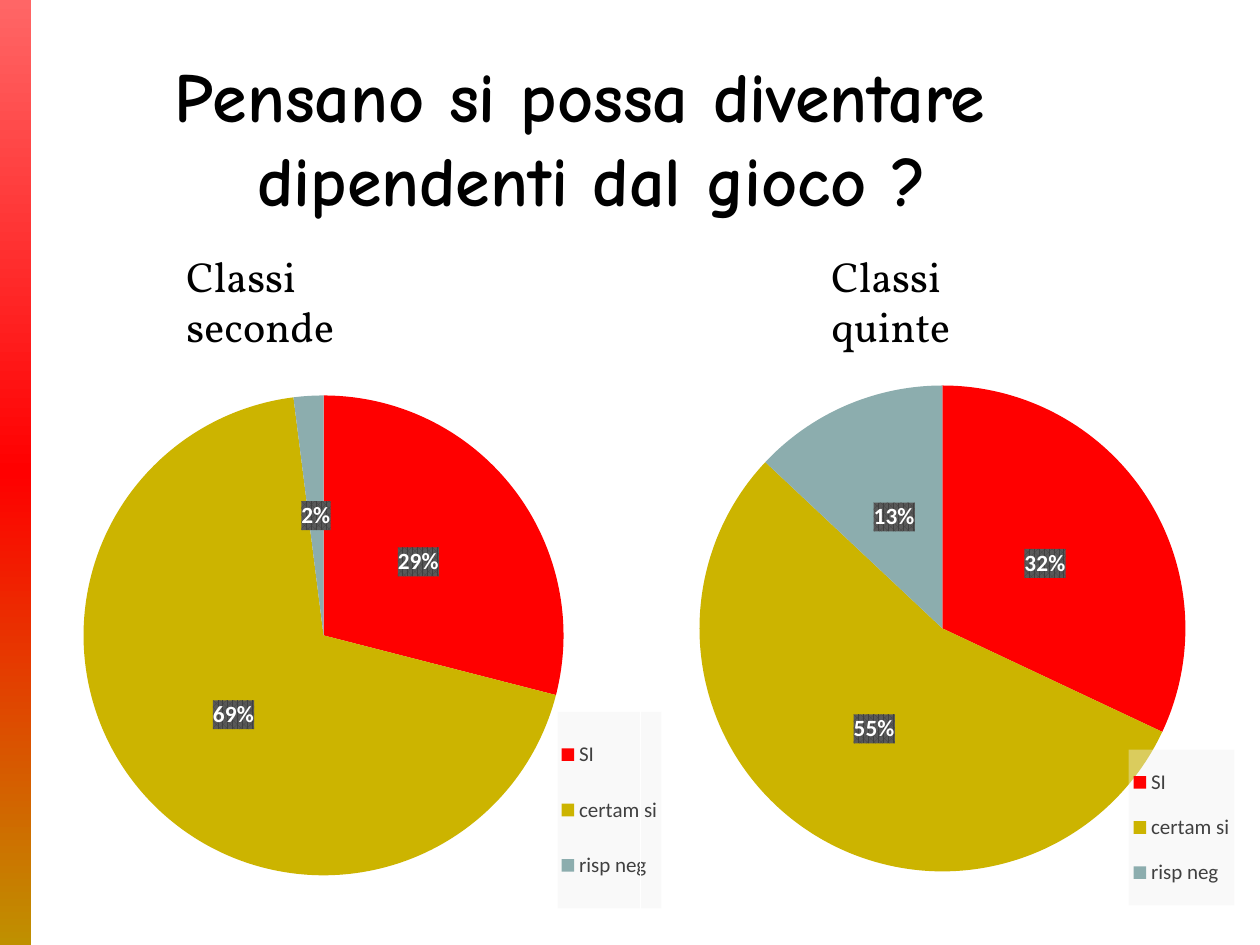
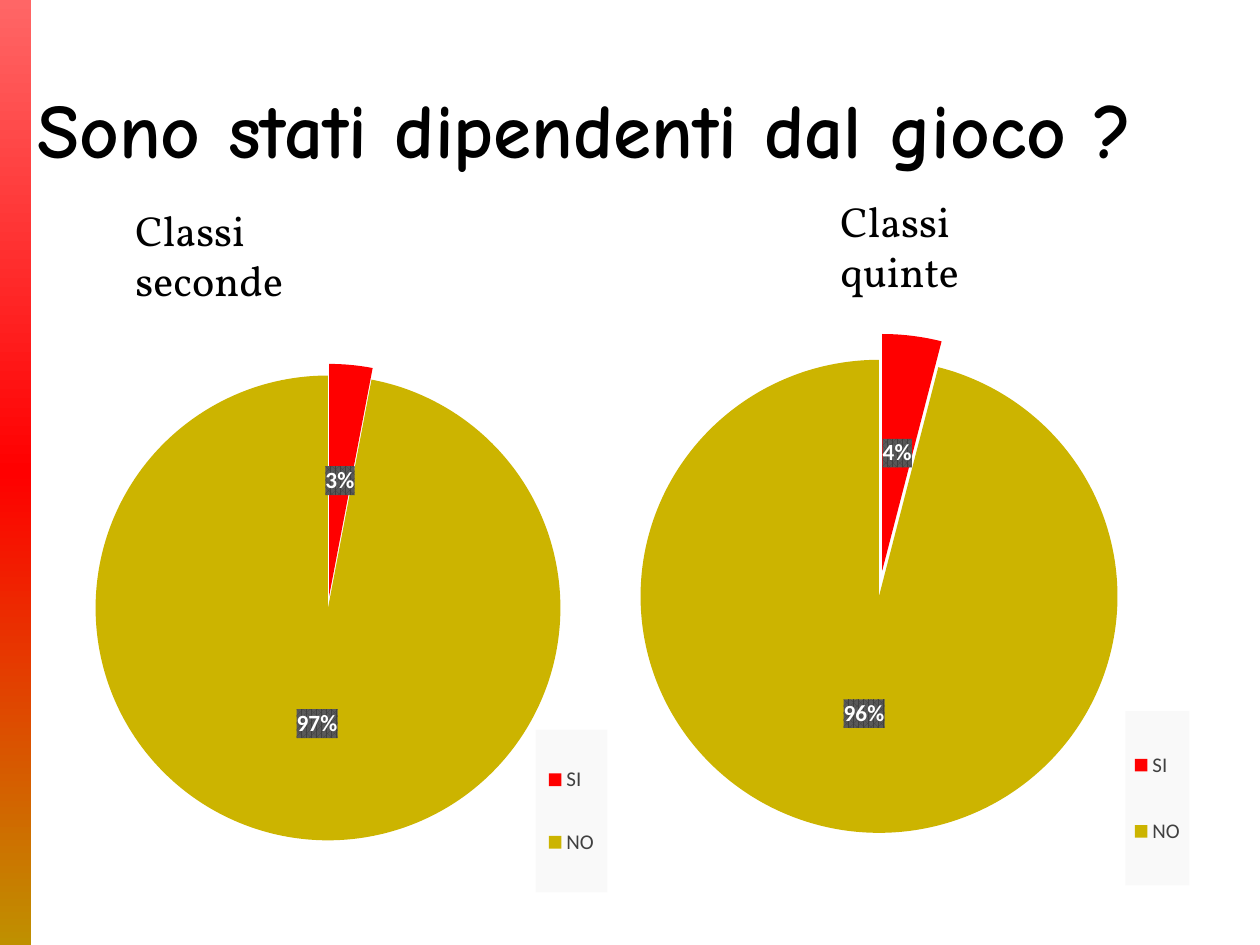
from lxml import etree
from pptx import Presentation
from pptx import util as u
from pptx.chart.data import CategoryChartData
from pptx.dml.color import RGBColor
from pptx.enum import chart as ch, shapes, text
from pptx.oxml.ns import qn

# Shared style
SCALE = 914400 / 126  # EMU in one px
BLACK = RGBColor(0, 0, 0)
WHITE = RGBColor(255, 255, 255)
GREY = RGBColor(0x40, 0x40, 0x40)
RED = RGBColor(255, 0, 0)
GOLD = RGBColor(0xCC, 0xB4, 0)
TEAL = RGBColor(0x8C, 0xAD, 0xAE)
CORAL = RGBColor(255, 0x66, 0x66)
OCHRE = RGBColor(0xBF, 0x90, 0)
ASH = RGBColor(0x59, 0x59, 0x59)
MIST = RGBColor(0xF2, 0xF2, 0xF2)
HEAD, BODY, DATA = "Comic Neue", "Vollkorn", "Calibri"
NS = ('xmlns:a="http://schemas.openxmlformats.org/drawingml/2006/main" '
      'xmlns:c="http://schemas.openxmlformats.org/drawingml/2006/chart"')


def px(*vals):
    return [u.Emu(round(v * SCALE)) for v in vals]


def node(xml):
    """Parse a fragment whose root tag carries no attributes."""
    return etree.fromstring(xml.replace(">", f" {NS}>", 1))


def paint(host, fill):
    """Give a chart part its fill, just before its text style."""
    host.find(qn("c:txPr")).addprevious(node(f"<c:spPr>{fill}</c:spPr>"))


def place(host, spot, box, frame, inner=""):
    """Lay out a chart part at a px box inside the px frame of its chart."""
    old = host.find(qn("c:layout"))
    if old is not None:
        host.remove(old)
    x, y, w, h = box
    left, top, wide, high = frame
    parts = {"x": (x - left) / wide, "y": (y - top) / high,
             "w": w / wide, "h": h / high}
    modes = '<c:xMode val="edge"/><c:yMode val="edge"/>'
    sizes = "".join(f'<c:{k} val="{v:.4f}"/>' for k, v in parts.items())
    host.insert(spot, node("<c:layout><c:manualLayout>"
                           f"{inner}{modes}{sizes}</c:manualLayout></c:layout>"))


class Deck:
    def __init__(self):
        self.prs = Presentation()
        self.prs.slide_width, self.prs.slide_height = px(1260, 945)
        self.slide = None

    def page(self):
        self.slide = self.prs.slides.add_slide(self.prs.slide_layouts[6])
        self.band()

    def band(self):
        bar = self.slide.shapes.add_shape(
            shapes.MSO_SHAPE.RECTANGLE, *px(0, 0, 31, 945))
        bar.shadow.inherit = False
        bar.line.fill.background()
        stops = "".join(
            f'<a:gs pos="{pos}"><a:srgbClr val="{tone}"/></a:gs>'
            for pos, tone in ((0, CORAL), (50000, RED), (100000, OCHRE)))
        grad = node(f"<a:gradFill><a:gsLst>{stops}</a:gsLst>"
                    '<a:lin ang="5400000" scaled="0"/></a:gradFill>')
        bar.fill.background()
        props = bar._element.spPr
        props.replace(props.find(qn("a:noFill")), grad)

    def words(self, line, box, face, size, bold=False, align=None, low=False):
        frame = self.slide.shapes.add_textbox(*px(*box)).text_frame
        frame.word_wrap = True
        if low:
            frame.vertical_anchor = text.MSO_ANCHOR.BOTTOM
        frame.text = line
        para = frame.paragraphs[0]
        para.alignment = align
        font = para.font
        font.name, font.size, font.bold = face, u.Pt(size), bold
        font.color.rgb = BLACK

    def title(self, line, box, size, align=text.PP_ALIGN.LEFT):
        self.words(line, box, HEAD, size, True, align, True)

    def label(self, line, box):
        self.words(line, box, BODY, 24)

    def pie(self, frame, plot, key, data, burst=0, solid=True):
        info = CategoryChartData()
        info.categories = list(data)
        info.add_series("Series 1", list(data.values()))
        chart = self.slide.shapes.add_chart(
            ch.XL_CHART_TYPE.PIE, *px(*frame), info).chart
        chart.has_title = False
        self.style(chart.font, 10, BLACK)
        fill = f'<a:solidFill><a:srgbClr val="{WHITE}"/></a:solidFill>'
        paint(chart._chartSpace,
              (fill if solid else "<a:noFill/>") + f'<a:ln w="9525">{fill}</a:ln>')
        place(chart._chartSpace.chart.plotArea, 0, plot, frame,
              '<c:layoutTarget val="inner"/>')

        # Slices
        series = chart.plots[0].series[0]
        for i, tone in enumerate((RED, GOLD, TEAL)[:len(data)]):
            slot = series.points[i].format.fill
            slot.solid()
            slot.fore_color.rgb = tone
        if burst:
            first = series._element.find(qn("c:dPt"))
            first.find(qn("c:spPr")).addprevious(
                etree.Element(qn("c:explosion"), val=str(burst)))

        # Percent labels
        tags = series.data_labels
        tags.show_percentage, tags.show_value = True, False
        tags.number_format, tags.number_format_is_linked = "0%", False
        tags.position = ch.XL_LABEL_POSITION.CENTER
        self.style(tags.font, 13.3, WHITE, True)
        paint(tags._element,
              f'<a:pattFill prst="pct75"><a:fgClr><a:srgbClr val="{GREY}"/></a:fgClr>'
              f'<a:bgClr><a:srgbClr val="{ASH}"/></a:bgClr></a:pattFill>')

        # Legend
        chart.has_legend = True
        legend = chart.legend
        legend.position = ch.XL_LEGEND_POSITION.RIGHT
        legend.include_in_layout = False
        self.style(legend.font, 12, GREY)
        paint(legend._element, f'<a:solidFill><a:srgbClr val="{MIST}">'
              '<a:alpha val="39000"/></a:srgbClr></a:solidFill>')
        place(legend._element, 1, key, frame)

    @staticmethod
    def style(font, size, tone, bold=False):
        font.name, font.size, font.bold = DATA, u.Pt(size), bold
        font.color.rgb = tone


def main():
    deck = Deck()

    # Can one become addicted?
    deck.page()
    deck.pie((44, 344, 625, 576), (75, 395, 497, 481), (558, 712, 104, 197),
             {"SI": 29, "certam si": 69, "risp neg": 2})
    deck.title("Pensano si possa diventare \vdipendenti dal gioco ?",
               (25, 0, 1134, 227), 40, text.PP_ALIGN.CENTER)
    deck.pie((640, 344, 600, 586), (699, 372, 487, 513), (1129, 750, 106, 156),
             {"SI": 32, "certam si": 55, "risp neg": 13}, solid=False)
    deck.label("Classi quinte", (819, 244, 169, 115))
    deck.label("Classi seconde", (174, 244, 248, 115))

    # Have they been addicted?
    deck.page()
    deck.pie((619, 334, 607, 556), (640, 355, 478, 478), (1126, 710, 64, 176),
             {"SI": 4, "NO": 96}, burst=11)
    deck.title("Sono stati dipendenti dal gioco ?", (25, -3, 1389, 183), 44)
    deck.pie((54, 331, 576, 568), (95, 375, 466, 466), (536, 730, 72, 163),
             {"SI": 3, "NO": 97}, burst=5)
    deck.label("Classi seconde", (123, 198, 258, 115))
    deck.label("Classi quinte", (828, 189, 208, 115))

    deck.prs.save("out.pptx")


if __name__ == "__main__":
    main()
